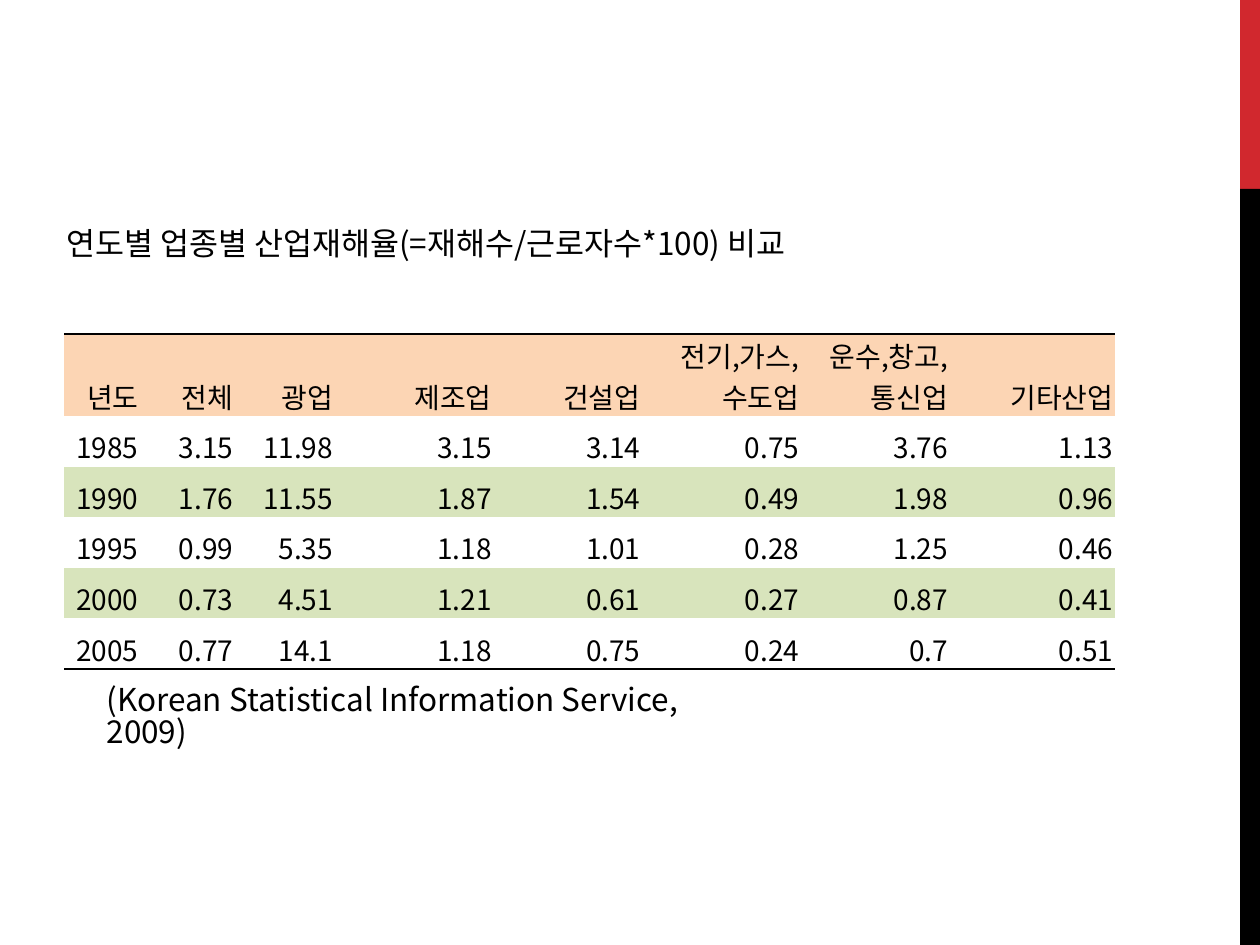
from dataclasses import dataclass

from lxml.etree import SubElement
from pptx import Presentation
from pptx.dml.color import RGBColor
from pptx.enum.shapes import MSO_SHAPE
from pptx.enum.text import MSO_ANCHOR, PP_ALIGN
from pptx.oxml import parse_xml
from pptx.oxml.ns import nsdecls, qn
from pptx.util import Cm, Pt


@dataclass(frozen=True)
class Theme:
    font: str = "Noto Sans CJK KR"
    ink: str = "000000"
    accent: str = "D1282E"
    header: str = "FCD5B4"
    band: str = "D8E4BC"
    body_size: int = 16
    text_size: int = 18
    rule_width: int = 1
    line_spacing: float = 0.83


@dataclass(frozen=True)
class Box:
    left: float
    top: float
    width: float
    height: float

    def lengths(self) -> tuple:
        return Cm(self.left), Cm(self.top), Cm(self.width), Cm(self.height)


@dataclass(frozen=True)
class Bar:
    box: Box
    color: str


@dataclass(frozen=True)
class Label:
    box: Box
    text: str


THEME = Theme()
NO_STYLE = "{2D5ABB26-0587-4C30-8999-92F81FD0307C}"

# Content
SIDE_BARS = [
    Bar(Box(25, 0, 0.4, 3.81), THEME.accent),
    Bar(Box(25, 3.81, 0.4, 15.24), THEME.ink),
]
LABELS = [
    Label(Box(1.09, 4.52, 16.43, 1.02),
          "연도별 업종별 산업재해율(=재해수/근로자수*100) 비교"),
    Label(Box(1.9, 13.72, 13.41, 1.02),
          "(Korean Statistical Information Service, 2009)"),
]
ACCIDENT_RATES = [
    ["년도", "전체", "광업", "제조업", "건설업",
     "전기,가스,\n수도업", "운수,창고,\n통신업", "기타산업"],
    ["1985", "3.15", "11.98", "3.15", "3.14", "0.75", "3.76", "1.13"],
    ["1990", "1.76", "11.55", "1.87", "1.54", "0.49", "1.98", "0.96"],
    ["1995", "0.99", "5.35", "1.18", "1.01", "0.28", "1.25", "0.46"],
    ["2000", "0.73", "4.51", "1.21", "0.61", "0.27", "0.87", "0.41"],
    ["2005", "0.77", "14.1", "1.18", "0.75", "0.24", "0.7", "0.51"],
]
INDUSTRY_WIDTHS = [1.52, 1.91, 2.01, 3.2, 3, 3.2, 3, 3.33]
HEADER_HEIGHT, YEAR_HEIGHT = 1.37, 1.02
CELL_FORMAT = {
    "vertical_anchor": MSO_ANCHOR.BOTTOM,
    "margin_left": Cm(0.03),
    "margin_right": Cm(0.03),
    "margin_top": Cm(0.03),
    "margin_bottom": Cm(0),
}


def apply_format(target, values: dict) -> None:
    for attribute, value in values.items():
        setattr(target, attribute, value)


def style_text(frame, size: int, paragraph_format: dict) -> None:
    for paragraph in frame.paragraphs:
        apply_format(paragraph, paragraph_format)
        for run in paragraph.runs:
            apply_format(run.font, {"name": THEME.font, "size": Pt(size)})
            run.font.color.rgb = RGBColor.from_string(THEME.ink)
            SubElement(run.font._element, qn("a:ea"), typeface=THEME.font)


def draw_bar(slide, bar: Bar) -> None:
    shape = slide.shapes.add_shape(MSO_SHAPE.RECTANGLE, *bar.box.lengths())
    shape.shadow.inherit = False
    shape.fill.solid()
    shape.fill.fore_color.rgb = RGBColor.from_string(bar.color)
    shape.line.fill.background()


def draw_label(slide, label: Label) -> None:
    frame = slide.shapes.add_textbox(*label.box.lengths()).text_frame
    frame.word_wrap = True
    frame.text = label.text
    style_text(frame, THEME.text_size, {"line_spacing": THEME.line_spacing})


def add_rule(cell, edge: str) -> None:
    rule = parse_xml(
        f'<a:{edge} {nsdecls("a")} w="{Pt(THEME.rule_width)}"><a:solidFill>'
        f'<a:srgbClr val="{THEME.ink}"/></a:solidFill></a:{edge}>')
    cell._tc.get_or_add_tcPr().insert(0, rule)


def fill_cell(cell, row: int) -> None:
    if row % 2:
        cell.fill.background()
        return
    cell.fill.solid()
    color = THEME.band if row else THEME.header
    cell.fill.fore_color.rgb = RGBColor.from_string(color)


def draw_rates(slide, rates: list[list[str]]) -> None:
    last = len(rates) - 1
    box = Box(1.3, 6.73, sum(INDUSTRY_WIDTHS), HEADER_HEIGHT + last * YEAR_HEIGHT)
    frame = slide.shapes.add_table(len(rates), len(rates[0]), *box.lengths())
    table = frame.table
    table._tbl.tblPr.find(qn("a:tableStyleId")).text = NO_STYLE
    apply_format(table, {"first_row": False, "horz_banding": False})
    for column, width in zip(table.columns, INDUSTRY_WIDTHS):
        column.width = Cm(width)
    for row, values in enumerate(rates):
        table.rows[row].height = Cm(YEAR_HEIGHT if row else HEADER_HEIGHT)
        for column, value in enumerate(values):
            cell = table.cell(row, column)
            cell.text = value
            apply_format(cell, CELL_FORMAT)
            style_text(cell.text_frame, THEME.body_size,
                       {"alignment": PP_ALIGN.RIGHT})
            fill_cell(cell, row)
            if row == 0:
                add_rule(cell, "lnT")
            elif row == last:
                add_rule(cell, "lnB")


def main() -> None:
    deck = Presentation()
    apply_format(deck, {"slide_width": Cm(25.4), "slide_height": Cm(19.05)})
    slide = deck.slides.add_slide(deck.slide_layouts[6])

    # Side bars
    for bar in SIDE_BARS:
        draw_bar(slide, bar)

    # Accident rates by year and industry
    draw_rates(slide, ACCIDENT_RATES)

    # Heading and source
    for label in LABELS:
        draw_label(slide, label)

    deck.save("out.pptx")


if __name__ == "__main__":
    main()
